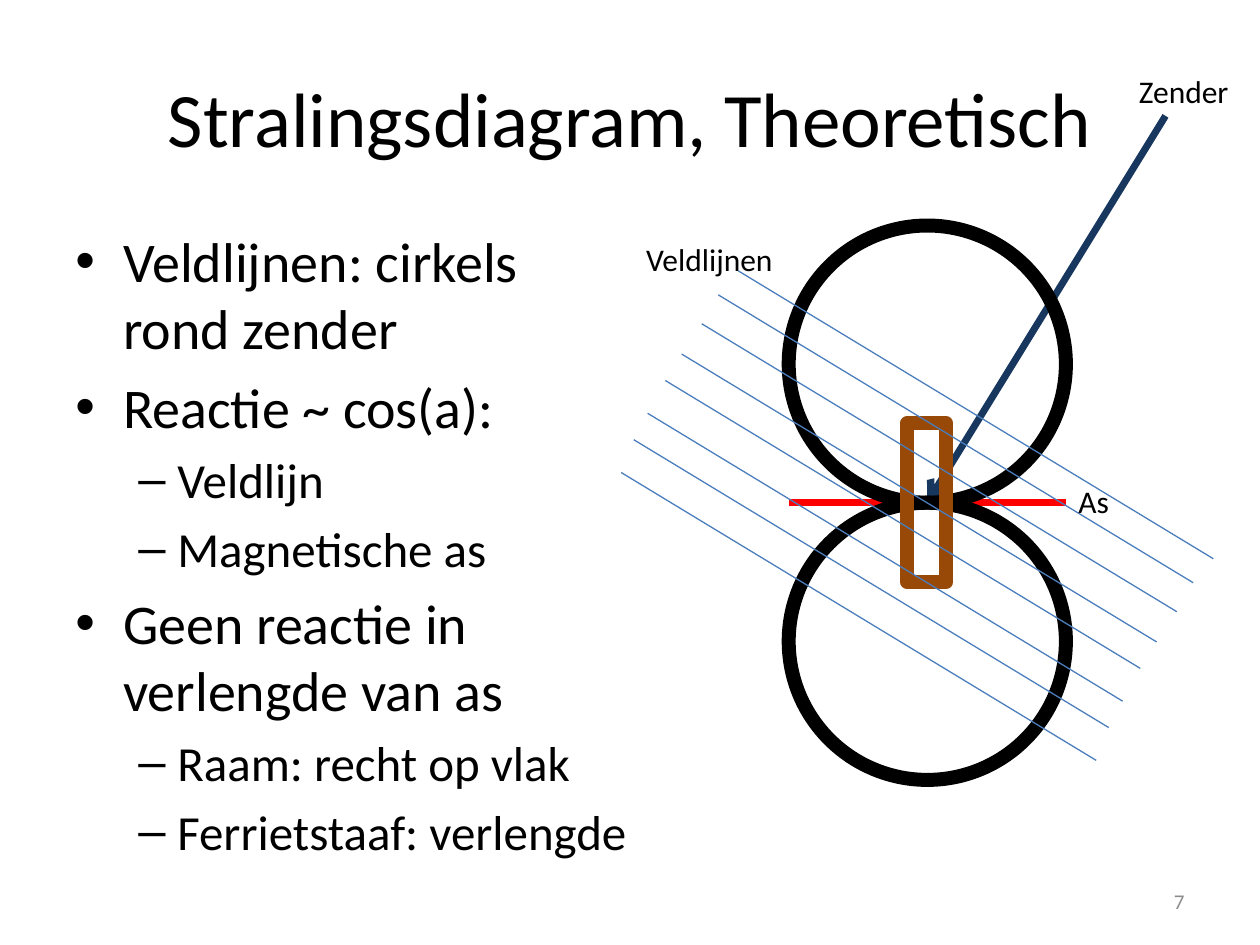
from lxml.etree import SubElement
from pptx import Presentation
from pptx.dml.color import RGBColor
from pptx.enum.shapes import MSO_CONNECTOR, MSO_SHAPE
from pptx.enum.text import MSO_ANCHOR, PP_ALIGN
from pptx.oxml.ns import qn
from pptx.util import Inches, Pt

BLACK = RGBColor(0x00, 0x00, 0x00)
RED = RGBColor(0xFF, 0x00, 0x00)
NAVY = RGBColor(0x17, 0x37, 0x5E)
BROWN = RGBColor(0x98, 0x48, 0x07)
BLUE = RGBColor(0x4B, 0x7E, 0xBC)
GREY = RGBColor(0x8C, 0x8C, 0x8C)

deck = Presentation()
deck.slide_width, deck.slide_height = Inches(10), Inches(7.5)
page = deck.slides.add_slide(deck.slide_layouts[5])
CELL = deck.slide_width / 100  # the page is a grid of 100 columns and 75 rows


def grid(*cells):
    return [round(cell * CELL) for cell in cells]


def write(para, text, size=18, color=BLACK, align=PP_ALIGN.LEFT):
    para.text = text
    para.alignment = align
    for span in para.runs:
        span.font.name = "Calibri"
        span.font.size = Pt(size)
        span.font.color.rgb = color


# Title
title = page.shapes.title
title.left, title.top, title.width, title.height = grid(5, 3, 90, 12.5)
title.text_frame.vertical_anchor = MSO_ANCHOR.MIDDLE
write(title.text_frame.paragraphs[0], "Stralingsdiagram, Theoretisch",
      size=44, align=PP_ALIGN.CENTER)

# Bulleted text
body = page.shapes.add_textbox(*grid(5, 17.5, 48.4, 54.5)).text_frame
body.word_wrap = True
LEVELS = [(32, "•", 0.38, -0.38), (28, "–", 0.81, -0.31)]
POINTS = [
    (0, "Veldlijnen: cirkels \vrond zender"),
    (0, "Reactie ~ cos(a):"),
    (1, "Veldlijn"),
    (1, "Magnetische as"),
    (0, "Geen reactie in verlengde van as"),
    (1, "Raam: recht op vlak"),
    (1, "Ferrietstaaf: verlengde"),
]
for index, (level, text) in enumerate(POINTS):
    para = body.add_paragraph() if index else body.paragraphs[0]
    size, bullet, margin, indent = LEVELS[level]
    write(para, text, size=size)
    para.level = level
    para.space_before = Pt(size * 0.2)
    properties = para._p.get_or_add_pPr()
    properties.set("marL", str(Inches(margin)))
    properties.set("indent", str(Inches(indent)))
    SubElement(properties, qn("a:buFont"), typeface="Arial")
    SubElement(properties, qn("a:buChar"), char=bullet)

# Lines: the axis and transmitter direction lie below the figures, the field above
CENTER_X, CENTER_Y, DIAMETER = 73.6, 39.9, 22
LEFT = CENTER_X - DIAMETER / 2
FIELD_RUN, FIELD_DROP = 37.7, 22.85
FIELD_STARTS = [(58.6, 21.5), (57, 23.4), (55.7, 25.7), (54.1, 28.1),
                (52.8, 30.2), (51.4, 32.8), (50.3, 34.9), (49.3, 37.5)]
LINES = [
    (LEFT, CENTER_Y, LEFT + DIAMETER, CENTER_Y, RED, 4),
    (92.5, 9.2, CENTER_X, CENTER_Y, NAVY, 4),
] + [(x, y, x + FIELD_RUN, y + FIELD_DROP, BLUE, 0.75) for x, y in FIELD_STARTS]
connectors = []
for *ends, color, weight in LINES:
    connector = page.shapes.add_connector(MSO_CONNECTOR.STRAIGHT, *grid(*ends))
    connector.line.color.rgb = color
    connector.line.width = Pt(weight)
    SubElement(connector._element.spPr, qn("a:effectLst"))
    connectors.append(connector)
axis, direction, *field_lines = connectors
SubElement(direction.line._get_or_add_ln(), qn("a:tailEnd"), type="arrow")

# Two lobes of the diagram and the antenna loop
FIGURES = [
    (MSO_SHAPE.OVAL, LEFT, CENTER_Y - DIAMETER, DIAMETER, DIAMETER, BLACK),
    (MSO_SHAPE.OVAL, LEFT, CENTER_Y, DIAMETER, DIAMETER, BLACK),
    (MSO_SHAPE.RECTANGLE, 72, 33.6, 3.1, 12.6, BROWN),
]
for kind, *place, color in FIGURES:
    figure = page.shapes.add_shape(kind, *grid(*place))
    figure.shadow.inherit = False
    figure.fill.background()
    figure.line.color.rgb = color
    figure.line.width = Pt(8)
    field_lines[0]._element.addprevious(figure._element)

# Labels and page number
LABELS = [
    ("Zender", 89.4, 5.2, 9.2, {}),
    ("As", 84.6, 37.8, 4.5, {}),
    ("Veldlijnen", 50.3, 18.6, 12.2, {}),
    ("7", 71.7, 69.5, 23.3, {"size": 12, "color": GREY, "align": PP_ALIGN.RIGHT}),
]
for text, left, top, width, style in LABELS:
    label = page.shapes.add_textbox(*grid(left, top, width, 4)).text_frame
    label.word_wrap = bool(style)
    label.vertical_anchor = MSO_ANCHOR.MIDDLE if style else MSO_ANCHOR.TOP
    write(label.paragraphs[0], text, **style)

deck.save("out.pptx")
